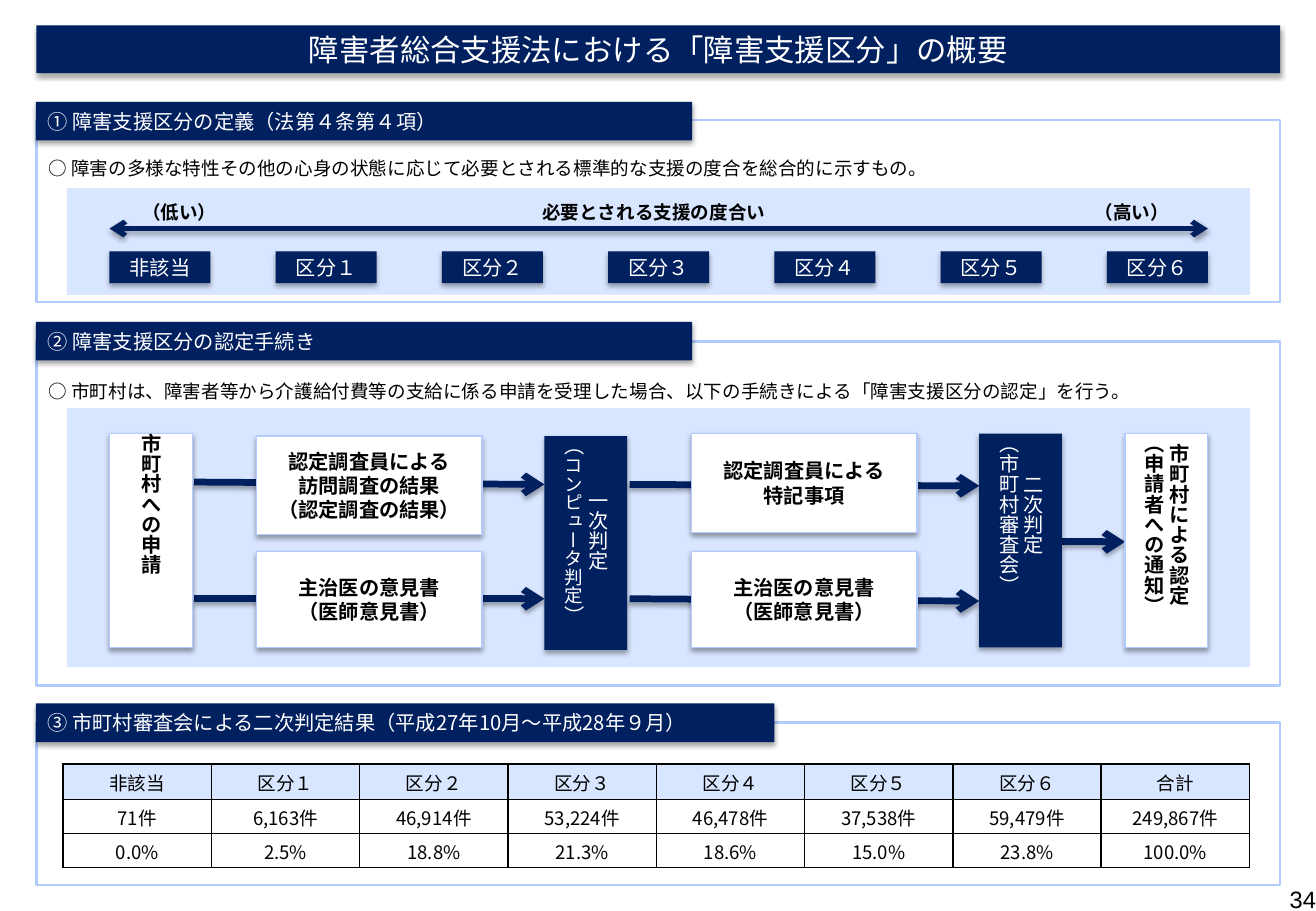
"""Build the slide that outlines disability support categories."""
from lxml.etree import SubElement
from pptx import Presentation
from pptx.dml.color import RGBColor
from pptx.enum.shapes import MSO_CONNECTOR, MSO_SHAPE
from pptx.enum.text import MSO_ANCHOR, MSO_AUTO_SIZE, PP_ALIGN
from pptx.oxml.ns import qn
from pptx.util import Cm, Pt

NAVY, PALE, BORDER, WHITE, BLACK = "002060", "D9E6FF", "B3CCFF", "FFFFFF", "000000"
JAPANESE = "Noto Sans CJK JP"


def write(frame, text, size, color=BLACK, bold=False, align=PP_ALIGN.CENTER, font=JAPANESE):
    """Fill a text frame and format its paragraphs."""
    frame.text = text
    frame.word_wrap = True
    for paragraph in frame.paragraphs:
        paragraph.alignment = align
        paragraph.font.size = Pt(size)
        paragraph.font.bold = bold
        paragraph.font.color.rgb = RGBColor.from_string(color)
        paragraph.font.name = font
        SubElement(paragraph._p.pPr.defRPr, qn("a:ea")).set("typeface", font)


def add_box(left, top, width, height, fill, line=None, line_width=0.75):
    """Add a filled rectangle with an optional outline."""
    box = slide.shapes.add_shape(
        MSO_SHAPE.RECTANGLE, Cm(left), Cm(top), Cm(width), Cm(height))
    box.fill.solid()
    box.fill.fore_color.rgb = RGBColor.from_string(fill)
    if line:
        box.line.color.rgb = RGBColor.from_string(line)
        box.line.width = Pt(line_width)
    else:
        box.line.fill.background()
    box.text_frame.vertical_anchor = MSO_ANCHOR.MIDDLE
    return box


presentation = Presentation()
presentation.slide_width, presentation.slide_height = Cm(27.51), Cm(19.05)
slide = presentation.slides.add_slide(presentation.slide_layouts[3])
title, definition, procedure = slide.placeholders
shadowed = [title]

title.left, title.top, title.width, title.height = Cm(0.76), Cm(0.53), Cm(26), Cm(1)
title.fill.solid()
title.fill.fore_color.rgb = RGBColor.from_string(NAVY)
write(title.text_frame, "障害者総合支援法における「障害支援区分」の概要", 18, WHITE)
title.text_frame.auto_size = MSO_AUTO_SIZE.NONE
title.text_frame.vertical_anchor = MSO_ANCHOR.MIDDLE

statements = [
    (definition, 2.51, 3.81, 0.68,
     "○ 障害の多様な特性その他の心身の状態に応じて必要とされる標準的な支援の度合を総合的に示すもの。"),
    (procedure, 7.14, 7.19, 0.71,
     "○ 市町村は、障害者等から介護給付費等の支給に係る申請を受理した場合、以下の手続きによる「障害支援区分の認定」を行う。"),
]
for body, top, height, inset, text in statements:
    body.left, body.top, body.width, body.height = Cm(0.76), Cm(top), Cm(26), Cm(height)
    body.line.color.rgb = RGBColor.from_string(BORDER)
    body.line.width = Pt(1.5)
    write(body.text_frame, text, 11, align=PP_ALIGN.LEFT)
    body.text_frame.auto_size = MSO_AUTO_SIZE.NONE
    body.text_frame.vertical_anchor = MSO_ANCHOR.TOP
    body.text_frame.margin_top = Cm(inset)
    paragraph = body.text_frame.paragraphs[0]
    paragraph.space_before = Pt(0)
    paragraph.line_spacing = Pt(16)
    properties = paragraph._p.pPr
    properties.set("marL", "0")
    properties.set("indent", "0")
    properties.defRPr.addprevious(SubElement(properties, qn("a:buNone")))

results_frame = add_box(0.76, 15.11, 26, 3.4, WHITE, BORDER, 1.5)
results_frame.fill.background()
results_frame.shadow.inherit = False

for top, height in [(3.94, 2.21), (8.53, 5.41)]:
    panel = add_box(1.4, top, 24.71, height, PALE, PALE, 0.25)
    panel.shadow.inherit = False

headings = [
    (2.13, 13.72, "① 障害支援区分の定義（法第４条第４項）"),
    (6.73, 13.72, "② 障害支援区分の認定手続き"),
    (14.71, 15.44, "③ 市町村審査会による二次判定結果（平成27年10月～平成28年９月）"),
]
for top, width, text in headings:
    heading = add_box(0.75, top, width, 0.81, NAVY)
    write(heading.text_frame, text, 12, WHITE, align=PP_ALIGN.LEFT)
    shadowed.append(heading)

categories = ["非該当", "区分１", "区分２", "区分３", "区分４", "区分５", "区分６"]
for index, category in enumerate(categories):
    chip = add_box(2.29 + index * 3.475, 5.26, 2.11, 0.66, NAVY)
    write(chip.text_frame, category, 12, WHITE)
    shadowed.append(chip)

scale_labels = [
    (9.58, 8.18, "必要とされる支援の度合い", PP_ALIGN.CENTER),
    (2.72, 2.72, "（低い）", PP_ALIGN.LEFT),
    (22.63, 2.72, "（高い）", PP_ALIGN.LEFT),
]
for left, width, text, align in scale_labels:
    label = slide.shapes.add_textbox(Cm(left), Cm(4.11), Cm(width), Cm(0.66))
    label.text_frame.vertical_anchor = MSO_ANCHOR.MIDDLE
    write(label.text_frame, text, 11, bold=True, align=align)

arrows = [
    (2.29, 4.78, 25.25, 4.78, 3, ["a:headEnd", "a:tailEnd"]),
    (4.06, 10.08, 11.38, 10.13, 4, ["a:tailEnd"]),
    (4.06, 12.52, 11.38, 12.52, 4, ["a:tailEnd"]),
    (13.16, 10.13, 20.47, 10.16, 4, ["a:tailEnd"]),
    (13.16, 12.52, 20.47, 12.57, 4, ["a:tailEnd"]),
    (22.2, 11.33, 23.52, 11.33, 4, ["a:tailEnd"]),
]
for start_x, start_y, end_x, end_y, width, ends in arrows:
    arrow = slide.shapes.add_connector(
        MSO_CONNECTOR.STRAIGHT, Cm(start_x), Cm(start_y), Cm(end_x), Cm(end_y))
    arrow.line.color.rgb = RGBColor.from_string(NAVY)
    arrow.line.width = Pt(width)
    for end in ends:
        SubElement(arrow.line._ln, qn(end)).set("type", "arrow")
    shadowed.append(arrow)

evidence = [
    (5.36, 9.12, 2.06, "認定調査員による\n訪問調査の結果\n（認定調査の結果）"),
    (5.36, 11.53, 2.01, "主治医の意見書\n（医師意見書）"),
    (14.45, 9.07, 2.06, "認定調査員による\n特記事項"),
    (14.45, 11.53, 2.01, "主治医の意見書\n（医師意見書）"),
]
for left, top, height, text in evidence:
    box = add_box(left, top, 4.72, height, WHITE, BORDER)
    box.text_frame.margin_top = box.text_frame.margin_bottom = 0
    write(box.text_frame, text, 12, bold=True)
    shadowed.append(box)

stages = [
    (2.29, 9.07, False, "市町村への申請"),
    (11.38, 9.12, True, "一次判定\n（"),
    (20.47, 9.07, True, "二次判定\n（市町村審査会）"),
    (23.52, 9.07, False, "市町村による認定\n（申請者への通知）"),
]
for left, top, is_judgement, text in stages:
    stage = add_box(left, top, 1.73, 4.47, NAVY if is_judgement else WHITE,
                    None if is_judgement else BORDER)
    frame = stage.text_frame
    frame.margin_left = frame.margin_right = frame.margin_top = frame.margin_bottom = 0
    frame._txBody.bodyPr.set("vert", "eaVert")
    write(frame, text, 12, WHITE if is_judgement else BLACK, not is_judgement)
    if text.endswith("（"):
        for part, size in [("コンピュータ判定", 11), ("）", 12)]:
            run = frame.paragraphs[1].add_run()
            run.text = part
            run.font.size = Pt(size)
    shadowed.append(stage)

results = [
    categories + ["合計"],
    ["71件", "6,163件", "46,914件", "53,224件", "46,478件", "37,538件", "59,479件", "249,867件"],
    ["0.0%", "2.5%", "18.8%", "21.3%", "18.6%", "15.0%", "23.8%", "100.0%"],
]
table = slide.shapes.add_table(3, 8, Cm(1.32), Cm(15.98), Cm(24.8), Cm(2.16)).table
table.first_row = table.horz_banding = False
for row_index, values in enumerate(results):
    table.rows[row_index].height = Cm(0.71 if row_index else 0.74)
    for column_index, value in enumerate(values):
        cell = table.cell(row_index, column_index)
        cell.margin_left = cell.margin_right = cell.margin_top = Cm(0.03)
        cell.margin_bottom = 0
        cell.vertical_anchor = MSO_ANCHOR.MIDDLE
        write(cell.text_frame, value, 11)
        for side in ["a:lnL", "a:lnR", "a:lnT", "a:lnB"]:
            border = SubElement(cell._tc.get_or_add_tcPr(), qn(side), w="12700")
            SubElement(SubElement(border, qn("a:solidFill")), qn("a:srgbClr"), val=BLACK)
        if row_index:
            cell.fill.background()
        else:
            cell.fill.solid()
            cell.fill.fore_color.rgb = RGBColor.from_string(PALE)

page_number = slide.shapes.add_textbox(Cm(21.34), Cm(18.39), Cm(6.17), Cm(0.66))
page_number.text_frame.margin_right = 0
write(page_number.text_frame, "34", 14, align=PP_ALIGN.RIGHT, font="Arial")

for shape in shadowed:
    effects = SubElement(shape._element.spPr, qn("a:effectLst"))
    shadow = SubElement(effects, qn("a:outerShdw"), blurRad="39370", dist="22860",
                        dir="5400000", rotWithShape="0")
    shadow_color = SubElement(shadow, qn("a:srgbClr"), val=BLACK)
    SubElement(shadow_color, qn("a:alpha"), val="35000")

presentation.save("out.pptx")
